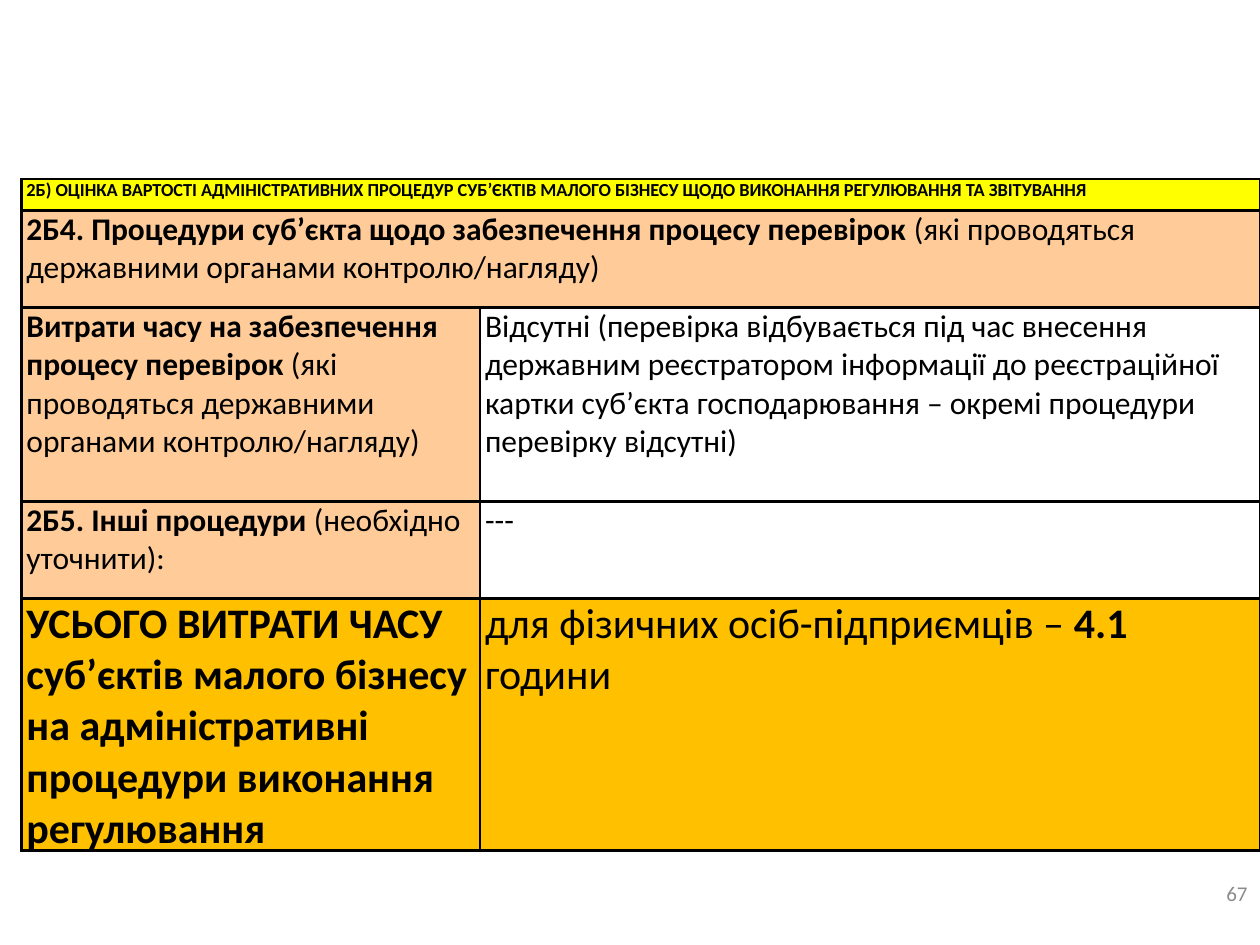
"""Build a slide with a cost table of administrative procedures for small business."""
from dataclasses import dataclass

from lxml import etree
from pptx import Presentation
from pptx import util as u
from pptx.dml import color
from pptx.enum import text
from pptx.oxml import ns


@dataclass(frozen=True)
class Theme:
    font: str = "Calibri"
    ink: str = "000000"
    muted: str = "8C8C8C"
    yellow: str = "FFFF00"
    peach: str = "FFCC99"
    amber: str = "FFC000"
    heading: float = 10.5
    body: float = 18
    total: float = 24
    number: float = 12
    border: float = 1.5


theme = Theme()


def add_text(para, content, size=theme.body, bold=False, ink=theme.ink):
    """Add one formatted span to a paragraph."""
    span = para.add_run()
    span.text = content
    span.font.name = theme.font
    span.font.size = u.Pt(size)
    span.font.bold = bold
    span.font.color.rgb = color.RGBColor.from_string(ink)


def add_borders(cell):
    """Draw a solid line on all four sides of a cell."""
    properties = cell._tc.get_or_add_tcPr()
    for side in ("a:lnL", "a:lnR", "a:lnT", "a:lnB"):
        line = etree.SubElement(properties, ns.qn(side), w=str(u.Pt(theme.border)))
        solid = etree.SubElement(line, ns.qn("a:solidFill"))
        etree.SubElement(solid, ns.qn("a:srgbClr"), val=theme.ink)


deck = Presentation()
deck.slide_width, deck.slide_height = u.Inches(10), u.Inches(7.5)
page = deck.slides.add_slide(deck.slide_layouts[6])

box = page.shapes.add_textbox(u.Inches(7.67), u.Inches(6.83), u.Inches(2.33), u.Inches(0.52))
box.text_frame.word_wrap = True
box.text_frame.vertical_anchor = text.MSO_ANCHOR.MIDDLE
number = box.text_frame.paragraphs[0]
number.alignment = text.PP_ALIGN.RIGHT
add_text(number, "67", size=theme.number, ink=theme.muted)

column_widths = [3.64, 6.19]
rows = [
    (0.25, theme.heading, [
        (theme.yellow, [("2Б) ОЦІНКА ВАРТОСТІ АДМІНІСТРАТИВНИХ ПРОЦЕДУР СУБ’ЄКТІВ МАЛОГО БІЗНЕСУ "
                         "ЩОДО ВИКОНАННЯ РЕГУЛЮВАННЯ ТА ЗВІТУВАННЯ", True)]),
    ]),
    (0.77, theme.body, [
        (theme.peach, [("2Б4. Процедури суб’єкта щодо забезпечення процесу перевірок ", True),
                       ("(які проводяться державними органами контролю/нагляду)", False)]),
    ]),
    (1.54, theme.body, [
        (theme.peach, [("Витрати часу на забезпечення процесу перевірок ", True),
                       ("(які проводяться державними органами контролю/нагляду)", False)]),
        (None, [("Відсутні (перевірка відбувається під час внесення державним реєстратором "
                 "інформації до реєстраційної картки суб’єкта господарювання – "
                 "окремі процедури перевірку відсутні)", False)]),
    ]),
    (0.77, theme.body, [
        (theme.peach, [("2Б5. Інші процедури ", True), ("(необхідно уточнити):", False)]),
        (None, [("---", False)]),
    ]),
    (1.54, theme.total, [
        (theme.amber, [("УСЬОГО ВИТРАТИ ЧАСУ суб’єктів малого бізнесу на адміністративні "
                        "процедури виконання регулювання", True)]),
        (theme.amber, [("для фізичних осіб-підприємців – ", False), ("4.1", True),
                       (" години", False)]),
    ]),
]

frame = page.shapes.add_table(
    len(rows), len(column_widths), u.Inches(0.17), u.Inches(1.42),
    u.Inches(sum(column_widths)), u.Inches(sum(height for height, _, _ in rows)))
table = frame.table
table.first_row = table.horz_banding = False
for column, width in zip(table.columns, column_widths):
    column.width = u.Inches(width)
for cell in table.iter_cells():
    cell.margin_left = cell.margin_right = u.Inches(0.04)
    cell.margin_top = cell.margin_bottom = 0
    add_borders(cell)

for row_index, (height, size, entries) in enumerate(rows):
    table.rows[row_index].height = u.Inches(height)
    if len(entries) == 1:
        table.cell(row_index, 0).merge(table.cell(row_index, 1))
    for column_index, (fill, spans) in enumerate(entries):
        cell = table.cell(row_index, column_index)
        if fill:
            cell.fill.solid()
            cell.fill.fore_color.rgb = color.RGBColor.from_string(fill)
        else:
            cell.fill.background()
        for content, bold in spans:
            add_text(cell.text_frame.paragraphs[0], content, size=size, bold=bold)

deck.save("out.pptx")
